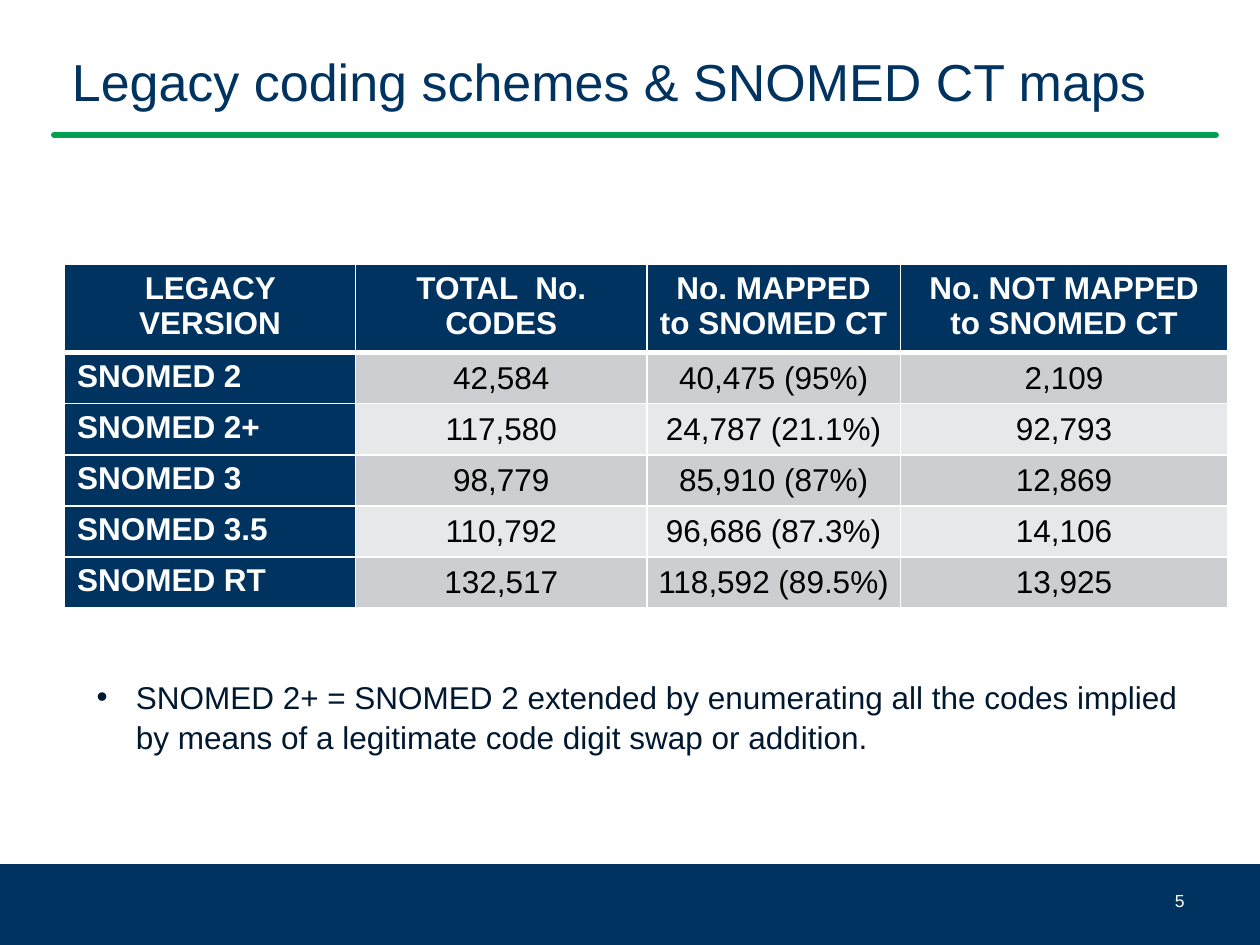
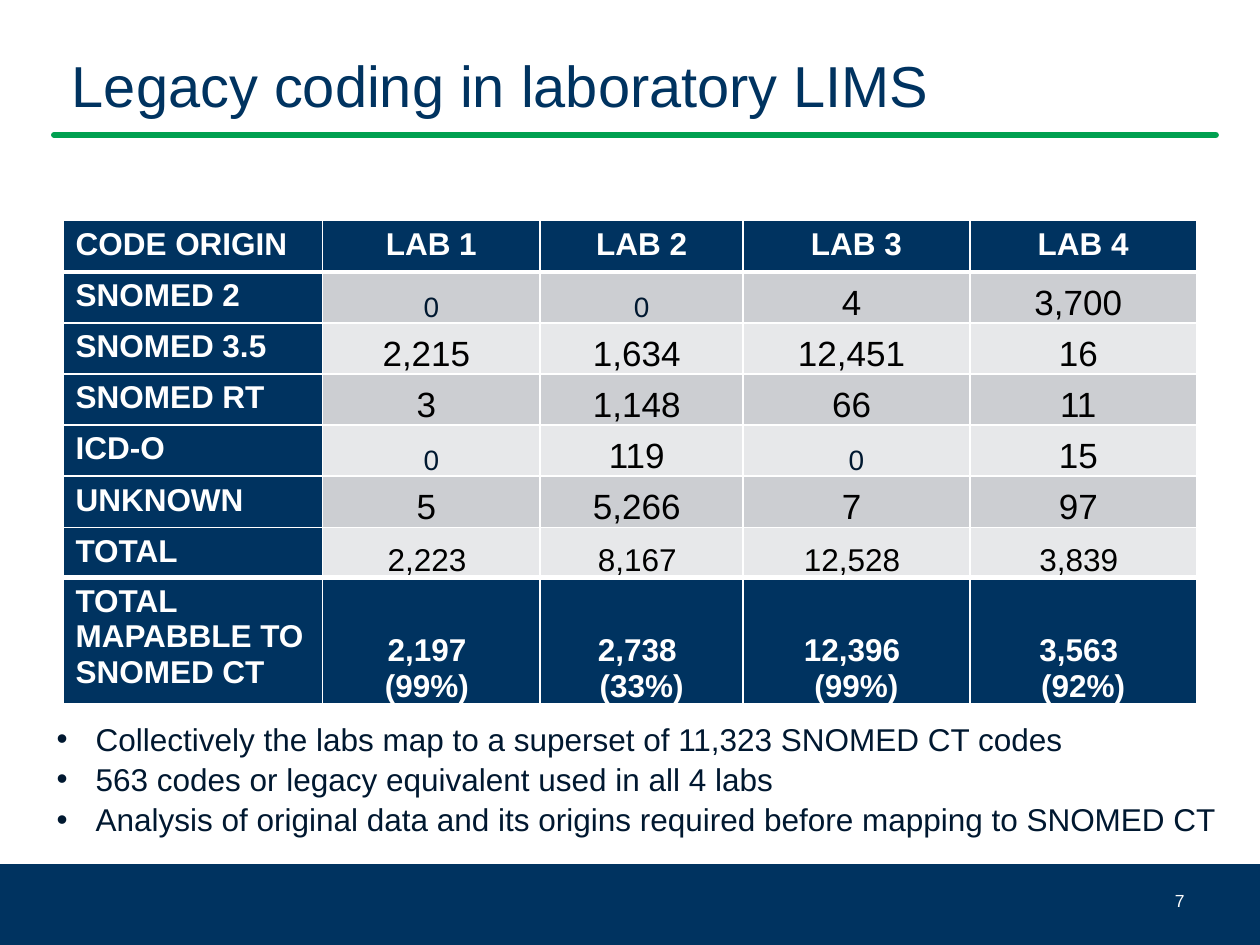
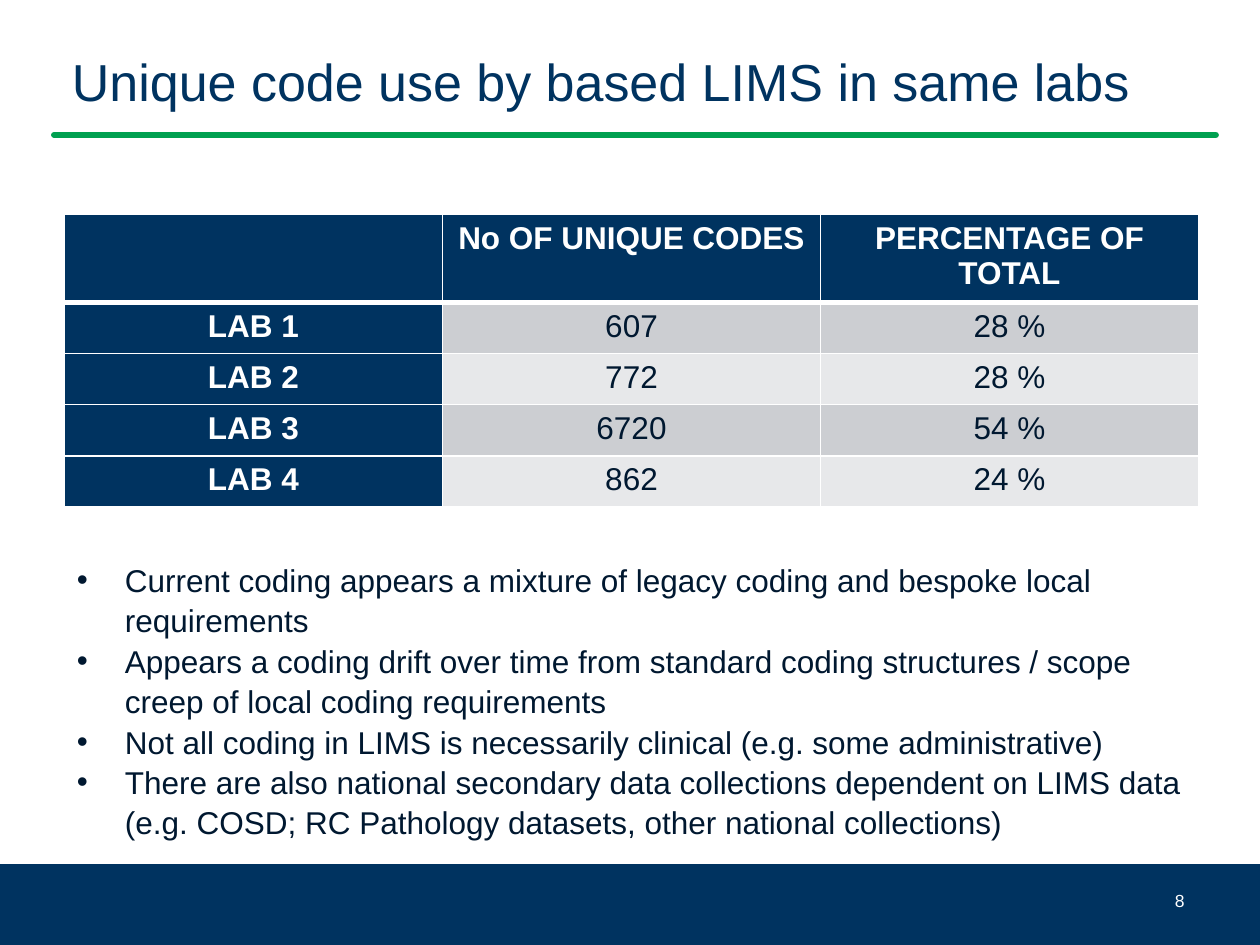
from dataclasses import dataclass
from typing import Any

from lxml.etree import SubElement
from pptx import Presentation
from pptx.dml.color import RGBColor
from pptx.enum.shapes import MSO_CONNECTOR, MSO_SHAPE
from pptx.enum.text import MSO_ANCHOR, PP_ALIGN
from pptx.oxml.ns import qn
from pptx.util import Cm, Pt

NAVY, GREEN, WHITE = "003360", "00A050", "FFFFFF"
BLACK, INK = "000000", "001830"
BANDS = ("CCCED2", "E7E8EA")
FONT = "Arial"
THIN, THICK = 1, 3
ROW_HEIGHT, HEADER_HEIGHT = 1.03, 1.65
COMPACT_MARGINS = {"margin_left": Cm(0.18), "margin_right": Cm(0.18),
                   "margin_top": 0, "margin_bottom": 0}
TITLE_FRAME = {"word_wrap": True, "vertical_anchor": MSO_ANCHOR.TOP, "margin_left": Cm(0.18),
               "margin_right": Cm(0.18), "margin_top": Cm(0.24)}
NUMBER_FRAME = {"word_wrap": True, "vertical_anchor": MSO_ANCHOR.MIDDLE}


@dataclass(frozen=True)
class TextStyle:
    """Describe the look of a run of text."""
    size: float
    color: str
    bold: bool = False


@dataclass(frozen=True)
class Box:
    """Hold a position and a size in centimetres."""
    left: float
    top: float
    width: float
    height: float

    def lengths(self) -> tuple[Cm, ...]:
        """Return the four lengths in drawing order."""
        return Cm(self.left), Cm(self.top), Cm(self.width), Cm(self.height)


@dataclass(frozen=True)
class CodeTable:
    """Describe a table of code counts."""
    left: float
    top: float
    column_widths: tuple[float, ...]
    row_heights: tuple[float, ...]
    rows: tuple[tuple[str, ...], ...]
    value_style: TextStyle
    value_frame: dict[str, Any]
    corner_alignment: PP_ALIGN = PP_ALIGN.CENTER
    label_alignment: PP_ALIGN = PP_ALIGN.LEFT
    has_totals: bool = False


@dataclass(frozen=True)
class BulletList:
    """Describe a bulleted list and its hanging indent."""
    box: Box
    indent: float
    lines: tuple[str, ...]


@dataclass(frozen=True)
class CodingSlide:
    """Describe the content of one slide."""
    title: str
    title_size: float
    number: int
    table: CodeTable
    bullets: BulletList


HEADING = TextStyle(18, WHITE, True)
BODY = TextStyle(18, INK)
ZERO = TextStyle(16, INK)
TOTAL = TextStyle(18, BLACK)
PAGE_NUMBER = TextStyle(10, WHITE)

SLIDES = (
    CodingSlide(
        "Legacy coding schemes & SNOMED CT maps", 29.7, 5,
        CodeTable(
            1.3, 5.33, (5.87, 5.87, 5.11, 6.6), (HEADER_HEIGHT,) + (ROW_HEIGHT,) * 5,
            (
                ("LEGACY VERSION", "TOTAL  No. CODES", "No. MAPPED to SNOMED CT",
                 "No. NOT MAPPED to SNOMED CT"),
                ("SNOMED 2", "42,584", "40,475 (95%)", "2,109"),
                ("SNOMED 2+", "117,580", "24,787 (21.1%)", "92,793"),
                ("SNOMED 3", "98,779", "85,910 (87%)", "12,869"),
                ("SNOMED 3.5", "110,792", "96,686 (87.3%)", "14,106"),
                ("SNOMED RT", "132,517", "118,592 (89.5%)", "13,925"),
            ),
            TextStyle(18, BLACK), COMPACT_MARGINS | {"vertical_anchor": MSO_ANCHOR.MIDDLE},
        ),
        BulletList(Box(1.7, 13.49, 22.61, 3.33), 0.79, (
            "SNOMED 2+ = SNOMED 2 extended by enumerating all the codes implied "
            "by means of a legitimate code digit swap or addition.",
        )),
    ),
    CodingSlide(
        "Legacy coding in laboratory LIMS", 33, 7,
        CodeTable(
            1.27, 4.45, (5.23, 4.39, 4.09, 4.57, 4.57), (ROW_HEIGHT,) * 6 + (0.98, 2.37),
            (
                ("CODE ORIGIN", "LAB 1", "LAB 2", "LAB 3", "LAB 4"),
                ("SNOMED 2", "0", "0", "4 ", "3,700 "),
                ("SNOMED 3.5", "2,215 ", "1,634 ", "12,451 ", "16 "),
                ("SNOMED RT", "3 ", "1,148 ", "66 ", "11 "),
                ("ICD-O", "0", "119 ", "0", "15 "),
                ("UNKNOWN", "5 ", "5,266 ", "7 ", "97 "),
                ("TOTAL", "2,223 ", "8,167 ", "12,528 ", "3,839 "),
                ("TOTAL MAPABBLE TO SNOMED CT", "2,197 \n(99%) ", "2,738 \n(33%)",
                 "12,396 \n(99%)", "3,563 \n(92%)"),
            ),
            TextStyle(20, BLACK), COMPACT_MARGINS | {"vertical_anchor": MSO_ANCHOR.BOTTOM},
            corner_alignment=PP_ALIGN.LEFT, has_totals=True,
        ),
        BulletList(Box(0.89, 14.33, 24.51, 2.57), 0.79, (
            "Collectively the labs map to a superset of 11,323 SNOMED CT codes",
            "563 codes or legacy equivalent used in all 4 labs",
            "Analysis of original data and its origins required before mapping to SNOMED CT",
        )),
    ),
    CodingSlide(
        "Unique code use by based LIMS in same labs", 29.7, 8,
        CodeTable(
            1.3, 4.32, (7.62,) * 3, (HEADER_HEIGHT,) + (ROW_HEIGHT,) * 4,
            (
                ("", "No OF UNIQUE CODES", "PERCENTAGE OF TOTAL"),
                ("LAB 1", "607", "28 %"),
                ("LAB 2", "772", "28 %"),
                ("LAB 3", "6720", "54 %"),
                ("LAB 4", "862", "24 %"),
            ),
            BODY, {"vertical_anchor": MSO_ANCHOR.TOP}, label_alignment=PP_ALIGN.CENTER,
        ),
        BulletList(Box(1.3, 11.13, 23.01, 5.7), 0.97, (
            "Current coding appears a mixture of legacy coding and bespoke local requirements",
            "Appears a coding drift over time from standard coding structures / scope "
            "creep of local coding requirements",
            "Not all coding in LIMS is necessarily clinical (e.g. some administrative)",
            "There are also national secondary data collections dependent on LIMS data "
            "(e.g. COSD; RC Pathology datasets, other national collections)",
        )),
    ),
)


def rgb(value: str) -> RGBColor:
    """Turn a hex string into a colour."""
    return RGBColor.from_string(value)


def apply_format(target: Any, values: dict[str, Any]) -> None:
    """Set each named attribute on the target."""
    for name, value in values.items():
        setattr(target, name, value)


def fill_solid(target: Any, color: str) -> None:
    """Fill a shape or a cell with one colour."""
    target.fill.solid()
    target.fill.fore_color.rgb = rgb(color)


def write_text(frame: Any, text: str, style: TextStyle, paragraph_format: dict[str, Any]) -> None:
    """Write text into a frame and style every paragraph alike."""
    frame.text = text
    for paragraph in frame.paragraphs:
        apply_format(paragraph, paragraph_format)
        for run in paragraph.runs:
            apply_format(run.font, {"name": FONT, "size": Pt(style.size), "bold": style.bold})
            run.font.color.rgb = rgb(style.color)


def add_text(slide: Any, box: Box, text: str, style: TextStyle, frame_format: dict[str, Any],
             paragraph_format: dict[str, Any]) -> Any:
    """Add a text box and return its frame."""
    frame = slide.shapes.add_textbox(*box.lengths()).text_frame
    apply_format(frame, frame_format)
    write_text(frame, text, style, paragraph_format)
    return frame


def add_furniture(slide: Any, content: CodingSlide) -> None:
    """Draw the footer band, title rule, title and slide number."""
    band = slide.shapes.add_shape(MSO_SHAPE.RECTANGLE, *Box(0, 17.42, 25.4, 1.7).lengths())
    band.shadow.inherit = False
    fill_solid(band, NAVY)
    band.line.fill.background()
    rule = slide.shapes.add_connector(MSO_CONNECTOR.STRAIGHT, Cm(1.09), Cm(2.72), Cm(24.51), Cm(2.72))
    rule.line.width = Pt(3.5)
    rule.line.color.rgb = rgb(GREEN)
    properties = rule.element.spPr
    properties.find(qn("a:ln")).set("cap", "rnd")
    SubElement(properties, qn("a:effectLst"))
    add_text(slide, Box(1.27, 0.76, 22.86, 1.96), content.title,
             TextStyle(content.title_size, NAVY), TITLE_FRAME, {"alignment": PP_ALIGN.LEFT})
    add_text(slide, Box(18.21, 17.65, 5.92, 1.02), str(content.number), PAGE_NUMBER,
             NUMBER_FRAME, {"alignment": PP_ALIGN.RIGHT})


def add_borders(cell: Any, top: int, bottom: int) -> None:
    """Draw white borders around a cell, with widths in points."""
    properties = cell._tc.get_or_add_tcPr()
    for side, width in (("L", THIN), ("R", THIN), ("T", top), ("B", bottom)):
        line = SubElement(properties, qn(f"a:ln{side}"), w=str(Pt(width)))
        SubElement(SubElement(line, qn("a:solidFill")), qn("a:srgbClr"), val=WHITE)


def value_style(design: CodeTable, row: int, text: str) -> TextStyle:
    """Choose the style of a count."""
    if text == "0":
        return ZERO
    if design.has_totals and row == len(design.rows) - 2:
        return TOTAL
    return design.value_style


def add_code_table(slide: Any, design: CodeTable) -> None:
    """Add a table with navy headings and banded counts."""
    box = Box(design.left, design.top, sum(design.column_widths), sum(design.row_heights))
    table = slide.shapes.add_table(len(design.rows), len(design.column_widths), *box.lengths()).table
    table.horz_banding = False
    for column, width in zip(table.columns, design.column_widths):
        column.width = Cm(width)
    for table_row, height in zip(table.rows, design.row_heights):
        table_row.height = Cm(height)
    totals_row = len(design.rows) - 1 if design.has_totals else None
    thick_edges = {1, totals_row}
    for row, texts in enumerate(design.rows):
        top, bottom = (THICK if edge in thick_edges else THIN for edge in (row, row + 1))
        for column, text in enumerate(texts):
            cell = table.cell(row, column)
            is_heading = row in (0, totals_row) or column == 0
            alignment = PP_ALIGN.CENTER
            if column == 0:
                alignment = design.label_alignment if row else design.corner_alignment
            add_borders(cell, top, bottom)
            fill_solid(cell, NAVY if is_heading else BANDS[(row - 1) % 2])
            if row and column:
                apply_format(cell, design.value_frame)
            style = HEADING if is_heading else value_style(design, row, text)
            write_text(cell.text_frame, text, style, {"alignment": alignment})


def add_bullets(slide: Any, bullets: BulletList) -> None:
    """Add a bulleted list with a hanging indent."""
    frame = add_text(slide, bullets.box, "\n".join(bullets.lines), BODY, {"word_wrap": True},
                     {"alignment": PP_ALIGN.LEFT, "line_spacing": 1.07})
    for paragraph in frame.paragraphs:
        properties = paragraph._p.get_or_add_pPr()
        properties.set("marL", str(Cm(bullets.indent)))
        properties.set("indent", str(-Cm(bullets.indent)))
        SubElement(properties, qn("a:buFont"), typeface=FONT)
        SubElement(properties, qn("a:buChar"), char="•")


def main() -> None:
    """Build and save the presentation."""
    presentation = Presentation()
    apply_format(presentation, {"slide_width": Cm(25.4), "slide_height": Cm(19.05)})
    for content in SLIDES:
        slide = presentation.slides.add_slide(presentation.slide_layouts[6])
        add_furniture(slide, content)
        add_code_table(slide, content.table)
        add_bullets(slide, content.bullets)
    presentation.save("out.pptx")


if __name__ == "__main__":
    main()
